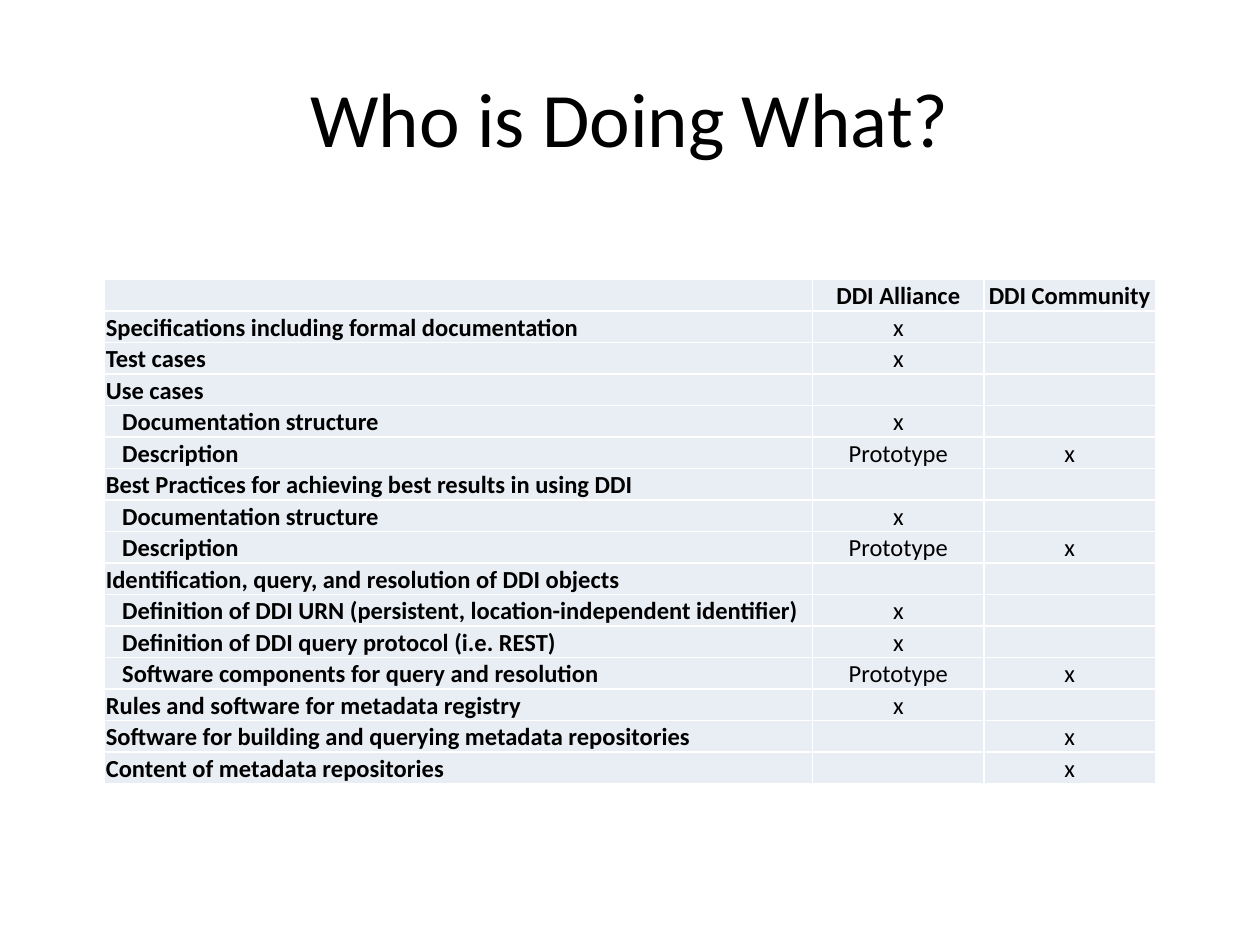
from lxml import etree
from pptx import Presentation
from pptx import util as u
from pptx.dml.color import RGBColor
from pptx.enum import text
from pptx.oxml import ns

TASKS = [
    (0, "Specifications including formal documentation", "x", ""),
    (0, "Test cases", "x", ""),
    (0, "Use cases", "", ""),
    (1, "Documentation structure", "x", ""),
    (1, "Description", "Prototype", "x"),
    (0, "Best Practices for achieving best results in using DDI", "", ""),
    (1, "Documentation structure", "x", ""),
    (1, "Description", "Prototype", "x"),
    (0, "Identification, query, and resolution of DDI objects", "", ""),
    (1, "Definition of DDI URN (persistent, location-independent identifier)", "x", ""),
    (1, "Definition of DDI query protocol (i.e. REST)", "x", ""),
    (1, "Software components for query and resolution", "Prototype", "x"),
    (0, "Rules and software for metadata registry", "x", ""),
    (0, "Software for building and querying metadata repositories", "", "x"),
    (0, "Content of metadata repositories", "", "x"),
]


def color(value):
    return RGBColor.from_string(value)


class SlideWriter:
    font = "Calibri"
    ink = "000000"
    cell_fill = "E9EDF4"
    border = "FFFFFF"
    cell_size = 14
    inset = 0.01
    indent = 0.13

    def __init__(self, deck):
        self.page = deck.slides.add_slide(deck.slide_layouts[5])

    def add_span(self, para, words, size, bold=False):
        span = para.add_run()
        span.text = words
        span.font.name = self.font
        span.font.size = u.Pt(size)
        span.font.bold = bold
        span.font.color.rgb = color(self.ink)

    def title(self, words, left, top, width, height):
        box = self.page.shapes.title
        box.left, box.top = u.Inches(left), u.Inches(top)
        box.width, box.height = u.Inches(width), u.Inches(height)
        box.text_frame.vertical_anchor = text.MSO_ANCHOR.MIDDLE
        para = box.text_frame.paragraphs[0]
        para.alignment = text.PP_ALIGN.CENTER
        self.add_span(para, words, 44)

    def draw_borders(self, cell):
        properties = cell._tc.get_or_add_tcPr()
        for side in ("a:lnL", "a:lnR", "a:lnT", "a:lnB"):
            line = etree.SubElement(properties, ns.qn(side), w=str(u.Pt(1)))
            fill = etree.SubElement(line, ns.qn("a:solidFill"))
            etree.SubElement(fill, ns.qn("a:srgbClr"), val=self.border)

    def fill_cell(self, cell, words, align, bold, level):
        self.draw_borders(cell)
        cell.fill.solid()
        cell.fill.fore_color.rgb = color(self.cell_fill)
        cell.vertical_anchor = text.MSO_ANCHOR.BOTTOM
        cell.margin_left = u.Inches(self.inset + level * self.indent)
        cell.margin_right = cell.margin_top = u.Inches(self.inset)
        cell.margin_bottom = 0
        para = cell.text_frame.paragraphs[0]
        para.alignment = align
        if words:
            self.add_span(para, words, self.cell_size, bold)
        else:
            etree.SubElement(para._p, ns.qn("a:endParaRPr"), sz=str(self.cell_size * 100))

    def table(self, header, tasks, left, top, widths, row_height):
        rows = [(0, *header), *tasks]
        frame = self.page.shapes.add_table(
            len(rows), len(widths), u.Inches(left), u.Inches(top),
            u.Inches(sum(widths)), u.Inches(row_height * len(rows)))
        grid = frame.table
        grid.first_row = grid.horz_banding = False
        for column, width in zip(grid.columns, widths):
            column.width = u.Inches(width)
        for r, (level, *entries) in enumerate(rows):
            grid.rows[r].height = u.Inches(row_height)
            for c, words in enumerate(entries):
                align = text.PP_ALIGN.CENTER if c else text.PP_ALIGN.LEFT
                self.fill_cell(grid.cell(r, c), words, align,
                               bold=r == 0 or c == 0, level=0 if c else level)


def main():
    deck = Presentation()
    deck.slide_width, deck.slide_height = u.Inches(10), u.Inches(7.5)
    writer = SlideWriter(deck)
    writer.title("Who is Doing What?", 0.5, 0.3, 9, 1.25)
    writer.table(("", "DDI Alliance", "DDI Community"), TASKS,
                 0.83, 2.22, (5.62, 1.36, 1.36), 0.25)
    deck.save("out.pptx")


if __name__ == "__main__":
    main()
